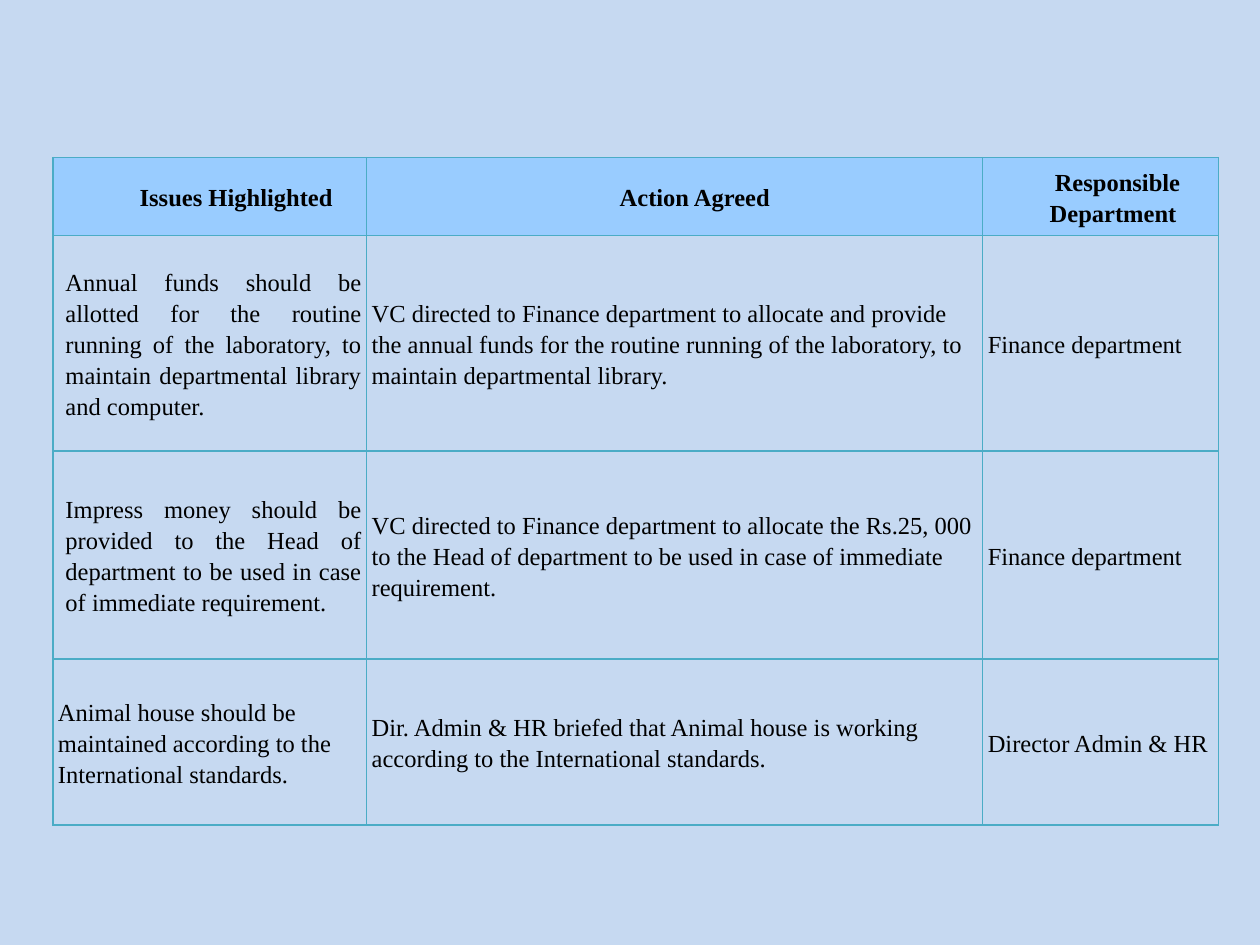
from lxml import etree
from pptx import Presentation
from pptx.dml.color import RGBColor
from pptx.enum.text import MSO_ANCHOR, PP_ALIGN
from pptx.oxml.ns import qn
from pptx.util import Inches, Pt

CENTER, JUSTIFY, LEFT = PP_ALIGN.CENTER, PP_ALIGN.JUSTIFY, PP_ALIGN.LEFT
MIDDLE = MSO_ANCHOR.MIDDLE

BACKGROUND, HEADER_FILL, BORDER, TEXT = "C6D9F1", "99CCFF", "4BACC6", "000000"
COLUMN_WIDTHS = [2.49, 4.89, 1.87]
ROW_HEIGHTS = [0.62, 1.71, 1.65, 1.32]

# Each header cell holds (line, left indent in inches) pairs.
HEADERS = [
    [("Issues Highlighted", 0.42)],
    [("Action Agreed", 0.32)],
    [("Responsible", 0.27), ("Department", 0.2)],
]
# Each row: issue, action, department, issue alignment, issue indent in inches.
ISSUES = [
    ("Annual funds should be allotted for the routine running of the laboratory, "
     "to maintain departmental library and computer.",
     "VC directed to Finance department to allocate and provide the annual funds "
     "for the routine running of the laboratory, to maintain departmental library.",
     "Finance department", JUSTIFY, 0.06),
    ("Impress money should be provided to the Head of department to be used in "
     "case of immediate requirement.",
     "VC directed to Finance department to allocate the Rs.25, 000 to the Head of "
     "department to be used in case of immediate requirement.",
     "Finance department", JUSTIFY, 0.06),
    ("Animal house should be maintained according to the International standards.",
     "Dir. Admin & HR briefed that Animal house is working according to the "
     "International standards.",
     "Director Admin & HR", LEFT, 0),
]


def color(value):
    return RGBColor.from_string(value)


def add_borders(cell):
    properties = cell._tc.get_or_add_tcPr()
    for side in ("lnL", "lnR", "lnT", "lnB"):
        line = etree.SubElement(properties, qn(f"a:{side}"), w=str(Pt(1)))
        fill = etree.SubElement(line, qn("a:solidFill"))
        etree.SubElement(fill, qn("a:srgbClr"), val=BORDER)


def fill_cell(cell, lines, align=LEFT, bold=False, fill=None):
    """Write (text, indent) lines into a bordered cell."""
    cell.vertical_anchor = MIDDLE
    cell.margin_left = cell.margin_right = Inches(0.04)
    cell.margin_top = cell.margin_bottom = 0
    add_borders(cell)
    if fill:
        cell.fill.solid()
        cell.fill.fore_color.rgb = color(fill)
    else:
        cell.fill.background()

    frame = cell.text_frame
    frame.text = "\n".join(text for text, _ in lines)
    for para, (_, indent) in zip(frame.paragraphs, lines):
        para.alignment = align
        para.line_spacing = 1.15
        para._p.get_or_add_pPr().set("marL", str(Inches(indent)))
        para.font.name = "Times New Roman"
        para.font.size = Pt(14)
        para.font.bold = bold
        para.font.color.rgb = color(TEXT)


def add_issue_table(page, left, top, width, height):
    table = page.shapes.add_table(
        len(ROW_HEIGHTS), len(COLUMN_WIDTHS), left, top, width, height).table
    table.first_row = table.horz_banding = False
    for column, column_width in zip(table.columns, COLUMN_WIDTHS):
        column.width = Inches(column_width)
    for row, row_height in zip(table.rows, ROW_HEIGHTS):
        row.height = Inches(row_height)

    for column, lines in enumerate(HEADERS):
        fill_cell(table.cell(0, column), lines, CENTER, True, HEADER_FILL)
    for row, (issue, action, department, align, indent) in enumerate(ISSUES, 1):
        fill_cell(table.cell(row, 0), [(issue, indent)], align)
        fill_cell(table.cell(row, 1), [(action, 0)])
        fill_cell(table.cell(row, 2), [(department, 0)])


def main():
    deck = Presentation()
    deck.slide_width, deck.slide_height = Inches(10), Inches(7.5)
    page = deck.slides.add_slide(deck.slide_layouts[6])
    page.background.fill.solid()
    page.background.fill.fore_color.rgb = color(BACKGROUND)
    add_issue_table(page, Inches(0.42), Inches(1.25),
                    Inches(sum(COLUMN_WIDTHS)), Inches(sum(ROW_HEIGHTS)))
    deck.save("out.pptx")


if __name__ == "__main__":
    main()
